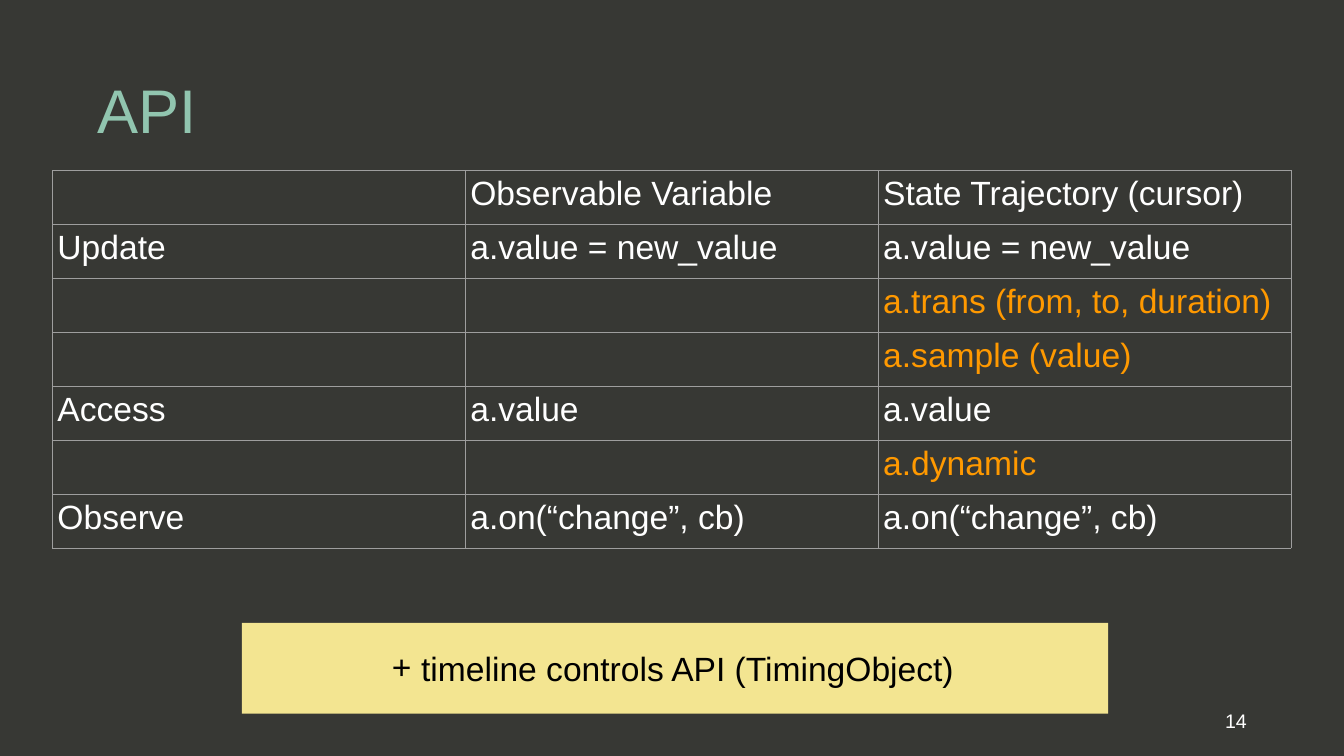
from lxml import etree
from pptx import Presentation
from pptx.dml.color import RGBColor
from pptx.enum.shapes import MSO_SHAPE
from pptx.enum.text import MSO_ANCHOR, PP_ALIGN
from pptx.oxml.ns import qn
from pptx.util import Pt

RECTANGLE = MSO_SHAPE.RECTANGLE
MIDDLE = MSO_ANCHOR.MIDDLE
LEFT, CENTER, RIGHT = PP_ALIGN.LEFT, PP_ALIGN.CENTER, PP_ALIGN.RIGHT

EMU_PER_PX = 9144
TITLE_ONLY = 5
FONT = "Arial"
COLORS = {
    "background": "373834",
    "title": "91C5AF",
    "text": "FFFFFF",
    "addition": "FF9900",
    "border": "9E9E9E",
    "banner": "F3E591",
    "banner_text": "000000",
}
API_ROWS = [
    ("", "Observable Variable", "State Trajectory (cursor)"),
    ("Update", "a.value = new_value", "a.value = new_value"),
    ("", "", "a.trans (from, to, duration)"),
    ("", "", "a.sample (value)"),
    ("Access", "a.value", "a.value"),
    ("", "", "a.dynamic"),
    ("Observe", "a.on(“change”, cb)", "a.on(“change”, cb)"),
]


def px(length):
    """Turn px, 100 to the inch, into EMU."""
    return length * EMU_PER_PX


def emu_box(box):
    """Turn a left, top, width, height box in px into EMU."""
    return [px(length) for length in box]


def color(key):
    """Look up a palette colour."""
    return RGBColor.from_string(COLORS[key])


def set_margins(area, side, end):
    """Set the inner margins of a text frame or a cell."""
    area.margin_left = area.margin_right = px(side)
    area.margin_top = area.margin_bottom = px(end)


def add_run(paragraph, text, size, color_key):
    """Add one formatted run to a paragraph."""
    run = paragraph.add_run()
    run.text = text
    run.font.name = FONT
    run.font.size = Pt(size)
    run.font.color.rgb = color(color_key)


def write_line(frame, text, size, color_key, alignment, end_margin=5):
    """Write one vertically centred line in a text frame."""
    frame.word_wrap = True
    frame.vertical_anchor = MIDDLE
    set_margins(frame, 10, end_margin)
    paragraph = frame.paragraphs[0]
    paragraph.alignment = alignment
    add_run(paragraph, text, size, color_key)
    return paragraph


def add_title(slide, box, text):
    """Place and format the title placeholder."""
    title = slide.shapes.title
    title.left, title.top, title.width, title.height = emu_box(box)
    write_line(title.text_frame, text, 88, "title", LEFT).line_spacing = 0.9


def add_slide_number(slide, box, number):
    """Place the slide number."""
    number_box = slide.shapes.add_textbox(*emu_box(box))
    write_line(number_box.text_frame, number, 28, "text", RIGHT)


def add_cell_borders(cell):
    """Draw a thin line on each side of a cell."""
    properties = cell._tc.get_or_add_tcPr()
    for side in ("a:lnL", "a:lnR", "a:lnT", "a:lnB"):
        line = etree.SubElement(properties, qn(side), w=str(Pt(0.75)))
        fill = etree.SubElement(line, qn("a:solidFill"))
        etree.SubElement(fill, qn("a:srgbClr"), val=COLORS["border"])


def add_api_table(slide, box, rows):
    """Compare both APIs, marking calls that only the last column has."""
    table = slide.shapes.add_table(len(rows), len(rows[0]), *emu_box(box)).table
    table.first_row = table.horz_banding = False
    for row_index, row in enumerate(rows):
        for column_index, text in enumerate(row):
            cell = table.cell(row_index, column_index)
            set_margins(cell, 10, 10)
            add_cell_borders(cell)
            cell.fill.background()
            if text:
                is_addition = not any(row[:column_index]) and column_index == 2
                add_run(cell.text_frame.paragraphs[0], text, 48,
                        "addition" if is_addition else "text")


def add_plus_bullet(paragraph):
    """Give a paragraph a hanging plus sign as its bullet."""
    properties = paragraph._p.get_or_add_pPr()
    properties.set("marL", str(px(50)))
    properties.set("indent", str(px(-58)))
    bullet_color = etree.SubElement(properties, qn("a:buClr"))
    etree.SubElement(bullet_color, qn("a:srgbClr"), val=COLORS["banner_text"])
    etree.SubElement(properties, qn("a:buFont"), typeface=FONT)
    etree.SubElement(properties, qn("a:buChar"), char="+")


def add_banner(slide, box, text):
    """Place the highlighted note under the table."""
    banner = slide.shapes.add_shape(RECTANGLE, *emu_box(box))
    banner.shadow.inherit = False
    banner.fill.solid()
    banner.fill.fore_color.rgb = color("banner")
    banner.line.fill.background()
    add_plus_bullet(write_line(banner.text_frame, text, 48, "banner_text", CENTER, 10))


def main():
    """Build the API slide."""
    presentation = Presentation()
    presentation.slide_width, presentation.slide_height = px(2666), px(1500)
    slide = presentation.slides.add_slide(presentation.slide_layouts[TITLE_ONLY])
    slide.background.fill.solid()
    slide.background.fill.fore_color.rgb = color("background")
    add_title(slide, (183, 80, 2300, 290), "API")
    add_slide_number(slide, (1883, 1390, 600, 80), "14")
    add_api_table(slide, (104, 338, 3 * 819, 7 * 107), API_ROWS)
    add_banner(slide, (480, 1236, 1718, 180), "timeline controls API (TimingObject)")
    presentation.save("out.pptx")


if __name__ == "__main__":
    main()
